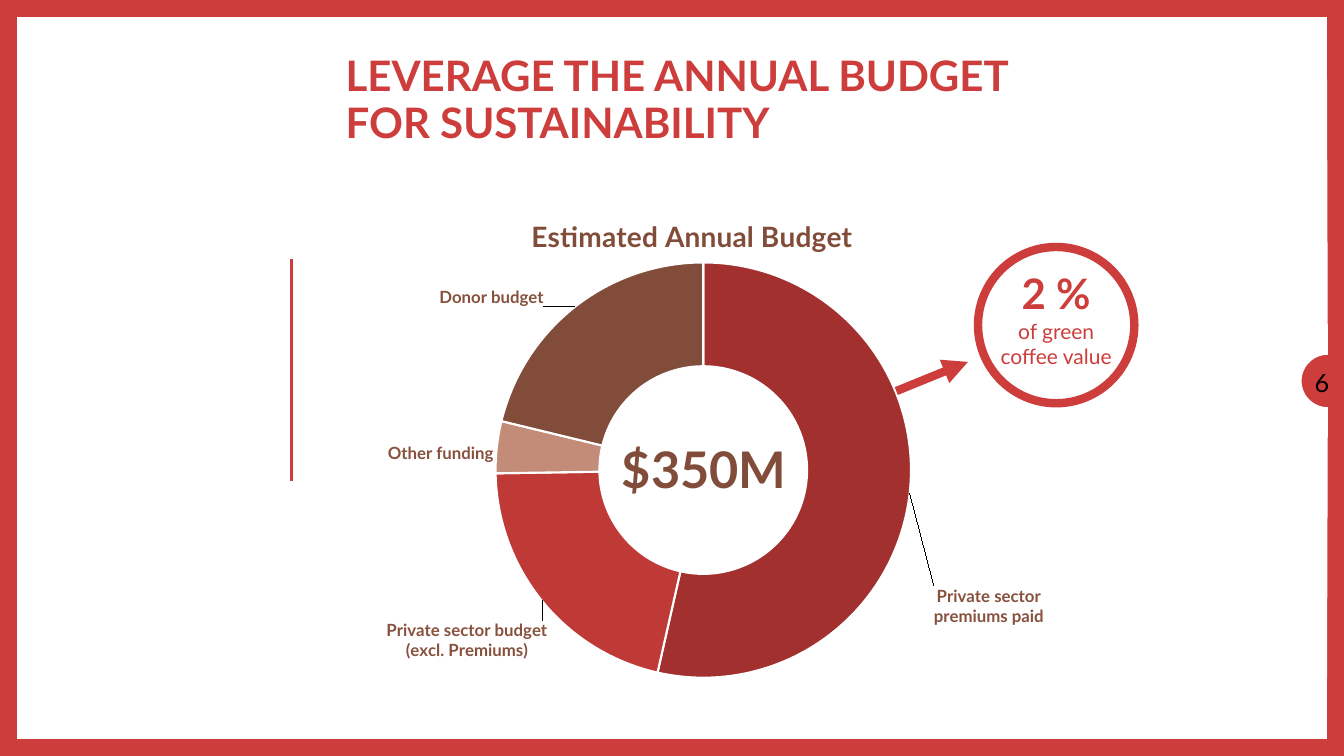
from math import cos, pi, sin
from lxml.etree import SubElement
from pptx import Presentation
from pptx.chart.data import CategoryChartData
from pptx.dml.color import RGBColor
from pptx.enum.chart import XL_CHART_TYPE
from pptx.enum.shapes import MSO_CONNECTOR, MSO_SHAPE
from pptx.enum.text import MSO_ANCHOR, PP_ALIGN
from pptx.oxml import parse_xml
from pptx.oxml.ns import nsdecls, qn
from pptx.util import Inches, Pt

THEME = {
    "font": "Lato",
    "red": RGBColor.from_string("CC3D3B"),
    "brown": RGBColor.from_string("814C3A"),
    "label": RGBColor.from_string("87513E"),
    "white": RGBColor.from_string("FFFFFF"),
    "black": RGBColor.from_string("000000"),
    "slices": ["A1302F", "BF3937", "C38C79", "814C3A"],
    "heading": 30, "total": 36, "caption": 15, "number": 18,
    "chart_title": 20, "chart_label": 12,
}

deck = Presentation()
deck.slide_width, deck.slide_height = Inches(13.33), Inches(7.5)
slide = deck.slides.add_slide(deck.slide_layouts[6])
slide.background.fill.solid()
slide.background.fill.fore_color.rgb = THEME["red"]


def share(*percents):
    sides = (deck.slide_width, deck.slide_height)
    return [round(sides[i % 2] * p / 100) for i, p in enumerate(percents)]


def write(text, *, at=None, frame=None, size, color, bold=False,
          align=PP_ALIGN.CENTER, anchor=MSO_ANCHOR.TOP, insets=None, spacing=None):
    if frame is None:
        frame = slide.shapes.add_textbox(*share(*at)).text_frame
        frame.word_wrap = True
        frame.vertical_anchor = anchor
        if insets:
            (frame.margin_left, frame.margin_top,
             frame.margin_right, frame.margin_bottom) = map(Inches, insets)
        paragraph = frame.paragraphs[0]
    else:
        paragraph = frame.add_paragraph()
    paragraph.text = text
    paragraph.alignment = align
    if spacing:
        paragraph.line_spacing = Pt(spacing)
    for run in paragraph.runs:
        run.font.name, run.font.size, run.font.bold = THEME["font"], Pt(size), bold
        run.font.color.rgb = color
    return frame


border, notch_x, notch_y, notch_radius = 0.17, 13.17, 3.78, 0.26
right, bottom = 13.33 - border, 7.5 - border
notch = [(notch_x - notch_radius * sin(pi * step / 40),
          notch_y - notch_radius * cos(pi * step / 40)) for step in range(41)]
outline = [(right, border), *notch, (right, bottom), (border, bottom)]
builder = slide.shapes.build_freeform(Inches(border), Inches(border))
builder.add_line_segments([(Inches(x), Inches(y)) for x, y in outline])
page = builder.convert_to_shape()
page.shadow.inherit = False
page.fill.solid()
page.fill.fore_color.rgb = THEME["white"]
page.line.fill.background()

badge = slide.shapes.add_shape(MSO_SHAPE.OVAL, *share(72.77, 32.67, 11.63, 20.67))
badge.shadow.inherit = False
badge.fill.solid()
badge.fill.fore_color.rgb = THEME["white"]
badge.line.color.rgb = THEME["red"]
badge.line.width = Pt(6)

write("6", at=(96.7, 47.87, 3.3, 5.33), size=THEME["number"], color=THEME["black"],
      anchor=MSO_ANCHOR.MIDDLE, insets=(0, 0, 0, 0))

budget = CategoryChartData()
budget.categories = ["Private sector premiums paid", "Private sector budget (excl. Premiums)",
                     "Other funding", "Donor budget"]
budget.add_series("Series 1", (53, 21, 4, 21))
chart = slide.shapes.add_chart(XL_CHART_TYPE.DOUGHNUT, *share(23.71, 25.2, 57.24, 67.87),
                               budget).chart
chart.has_legend = False
chart.font.name, chart.font.size = THEME["font"], Pt(10)
chart.has_title = True
chart.chart_title.include_in_layout = False
chart.chart_title.text_frame.text = "Estimated Annual Budget"
title_font = chart.chart_title.text_frame.paragraphs[0].runs[0].font
title_font.name, title_font.size, title_font.bold = THEME["font"], Pt(THEME["chart_title"]), True
title_font.color.rgb = THEME["brown"]

ring = chart.plots[0].series[0]
labels = ring.data_labels
labels.show_value, labels.show_category_name = False, True
for index, color in enumerate(THEME["slices"]):
    piece = ring.points[index]
    piece.format.fill.solid()
    piece.format.fill.fore_color.rgb = RGBColor.from_string(color)
    piece.format.line.color.rgb = THEME["white"]
    piece.format.line.width = Pt(1.5)
for font in [labels.font] + [ring.points[i].data_label.font for i in range(4)]:
    font.name, font.size, font.bold = THEME["font"], Pt(THEME["chart_label"]), True
    font.color.rgb = THEME["label"]

LAYOUT = "<c:layout %s><c:manualLayout>{}</c:manualLayout></c:layout>" % nsdecls("c")
EXTENSION = ('<c:extLst %s><c:ext uri="{{CE6537A1-D6FC-4f65-9D91-7224C49458BB}}" '
             'xmlns:c15="http://schemas.microsoft.com/office/drawing/2012/chart"><c15:layout>'
             '<c:manualLayout><c:w val="{}"/><c:h val="{}"/></c:manualLayout>'
             '</c15:layout></c:ext></c:extLst>' % nsdecls("c"))
offsets = [(0.17, 0.23, 0.16, 0.1), (-0.15, 0.14, 0.23, 0.1),
           (-0.14, 0, 0.16, 0.06), (-0.15, -0.1, 0.16, 0.06)]
series_xml = chart.plots[0].series[0]._element
for label, (x, y, w, h) in zip(series_xml.iter(qn("c:dLbl")), offsets):
    label.find(qn("c:showVal")).set("val", "0")
    label.find(qn("c:showCatName")).set("val", "1")
    label.insert(1, parse_xml(LAYOUT.format(f'<c:x val="{x}"/><c:y val="{y}"/>')))
    label.append(parse_xml(EXTENSION.format(w, h)))

EDGES = '<c:xMode val="edge"/><c:yMode val="edge"/><c:x val="{}"/><c:y val="{}"/>'
title_xml = chart.chart_title._element
plot_xml = series_xml.getparent().getparent()
rings = '<c:layoutTarget val="inner"/>' + EDGES + '<c:w val="0.54"/><c:h val="0.81"/>'
for parent, place, position in [(title_xml, EDGES.format(0.27, 0.04), 1),
                                (plot_xml, rings.format(0.23, 0.14), 0)]:
    for default in parent.findall(qn("c:layout")):
        parent.remove(default)
    parent.insert(position, parse_xml(LAYOUT.format(place)))

write("$350M", at=(44.41, 57.33, 15.98, 9.47), size=THEME["total"],
      color=THEME["brown"], bold=True)
share_text = write("2 %", at=(72.77, 34.8, 11.63, 15.2), size=THEME["heading"],
                   color=THEME["red"], bold=True)
write("of green\vcoffee value", frame=share_text, size=THEME["caption"], color=THEME["red"])

for ends, width, pointed in [((21.68, 34.27, 21.68, 63.6), 2, False),
                             ((66.69, 51.73, 72.02, 47.87), 6, True)]:
    rule = slide.shapes.add_connector(MSO_CONNECTOR.STRAIGHT, *share(*ends))
    rule.line.color.rgb = THEME["red"]
    rule.line.width = Pt(width)
    if pointed:
        SubElement(rule.line._get_or_add_ln(), qn("a:tailEnd"), type="triangle")
    SubElement(rule._element.spPr, qn("a:effectLst"))

write("LEVERAGE THE ANNUAL BUDGET\vFOR SUSTAINABILITY", at=(24.98, 6.93, 66.69, 12.53),
      size=THEME["heading"], color=THEME["red"], bold=True, align=PP_ALIGN.LEFT,
      anchor=MSO_ANCHOR.BOTTOM, insets=(0.1, 0.05, 0, 0), spacing=33.9)

deck.save("out.pptx")
